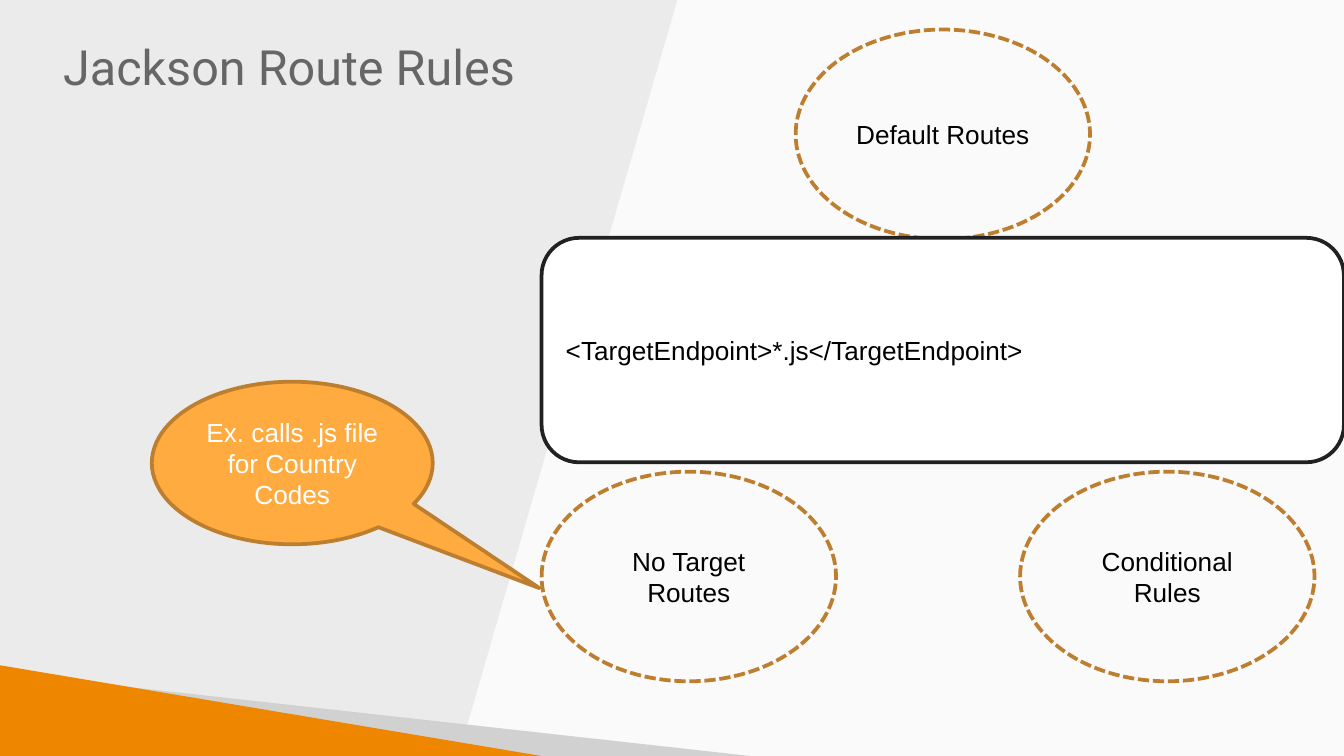
from pptx import Presentation
from pptx.dml.color import RGBColor
from pptx.enum.dml import MSO_LINE
from pptx.enum.shapes import MSO_SHAPE
from pptx.enum.text import MSO_ANCHOR, MSO_AUTO_SIZE, PP_ALIGN
from pptx.util import Inches, Pt

WIDTH = 10
HEIGHT = WIDTH * 9 / 16
PAPER = RGBColor(0xFA, 0xFA, 0xFA)
PALE = RGBColor(0xEB, 0xEB, 0xEB)
SILVER = RGBColor(0xD1, 0xD1, 0xD1)
ORANGE = RGBColor(0xEF, 0x86, 0x00)
AMBER = RGBColor(0xFF, 0xAB, 0x40)
BROWN = RGBColor(0xBD, 0x7F, 0x2F)
INK = RGBColor(0x21, 0x21, 0x21)
GREY = RGBColor(0x66, 0x66, 0x66)
BLACK = RGBColor(0, 0, 0)
WHITE = RGBColor(0xFF, 0xFF, 0xFF)

PANELS = [
    (PAPER, [(0, 0), (WIDTH, 0), (WIDTH, HEIGHT), (0, HEIGHT)]),
    (PALE, [(5.04, 0), (0, 0), (0, HEIGHT), (3.41, HEIGHT)]),
    (SILVER, [(0.85, 5.1), (5.58, HEIGHT), (4.01, HEIGHT)]),
    (ORANGE, [(0, 4.95), (0, HEIGHT), (4.03, HEIGHT)]),
]
ROUTES = [
    ("Default Routes", 5.92, 0.22),
    ("No Target Routes", 4.03, 3.51),
    ("Conditional Rules", 7.59, 3.51),
]


def style(target, formats):
    for name, value in formats.items():
        setattr(target, name, value)


def paint(shape, color):
    shape.fill.solid()
    shape.fill.fore_color.rgb = color


def write(shape, text, font, size, color, align):
    frame = shape.text_frame
    style(frame, {"text": text, "word_wrap": True,
                  "vertical_anchor": MSO_ANCHOR.MIDDLE,
                  "auto_size": MSO_AUTO_SIZE.NONE})
    line = frame.paragraphs[0]
    line.alignment = align
    run = line.runs[0]
    style(run.font, {"name": font, "size": Pt(size)})
    run.font.color.rgb = color


def add_panel(slide, color, points):
    spots = [(Inches(x), Inches(y)) for x, y in points]
    builder = slide.shapes.build_freeform(*spots[0])
    builder.add_line_segments(spots[1:])
    panel = builder.convert_to_shape()
    panel.shadow.inherit = False
    paint(panel, color)
    panel.line.fill.background()


def add_title(slide, text):
    title = slide.shapes.title
    style(title, {"left": Inches(0.39), "top": Inches(0.22),
                  "width": Inches(8.53), "height": Inches(0.55)})
    write(title, text, "Roboto", 26, GREY, PP_ALIGN.LEFT)
    style(title.text_frame, {
        "margin_left": Inches(0.08), "margin_right": Inches(0.08),
        "margin_top": Inches(0.04), "margin_bottom": Inches(0.04)})
    # Bring the title in front of the panels
    title.element.getparent().append(title.element)


def add_node(slide, kind, box, text, fill=None, edge=BROWN,
             color=BLACK, align=PP_ALIGN.CENTER):
    node = slide.shapes.add_shape(kind, *map(Inches, box))
    node.shadow.inherit = False
    if fill is None:
        node.fill.background()
    else:
        paint(node, fill)
    node.line.color.rgb = edge
    node.line.width = Pt(2)
    write(node, text, "Arial", 14, color, align)
    return node


def add_route(slide, text, left, top):
    route = add_node(slide, MSO_SHAPE.OVAL, (left, top, 2.19, 1.56), text)
    route.line.dash_style = MSO_LINE.SQUARE_DOT


def main():
    deck = Presentation()
    style(deck, {"slide_width": Inches(WIDTH), "slide_height": Inches(HEIGHT)})
    slide = deck.slides.add_slide(deck.slide_layouts[5])

    for color, points in PANELS:
        add_panel(slide, color, points)
    add_title(slide, "Jackson Route Rules")
    for text, left, top in ROUTES:
        add_route(slide, text, left, top)
    add_node(slide, MSO_SHAPE.ROUNDED_RECTANGLE, (4.03, 1.77, 5.97, 1.67),
             "<TargetEndpoint>*.js</TargetEndpoint>",
             fill=WHITE, edge=INK, align=PP_ALIGN.LEFT)
    callout = add_node(slide, MSO_SHAPE.OVAL_CALLOUT, (1.13, 2.84, 2.09, 1.21),
                       "Ex. calls .js file for Country Codes",
                       fill=AMBER, color=WHITE)
    callout.adjustments[0] = 0.88
    callout.adjustments[1] = 0.77

    deck.save("out.pptx")


if __name__ == "__main__":
    main()
